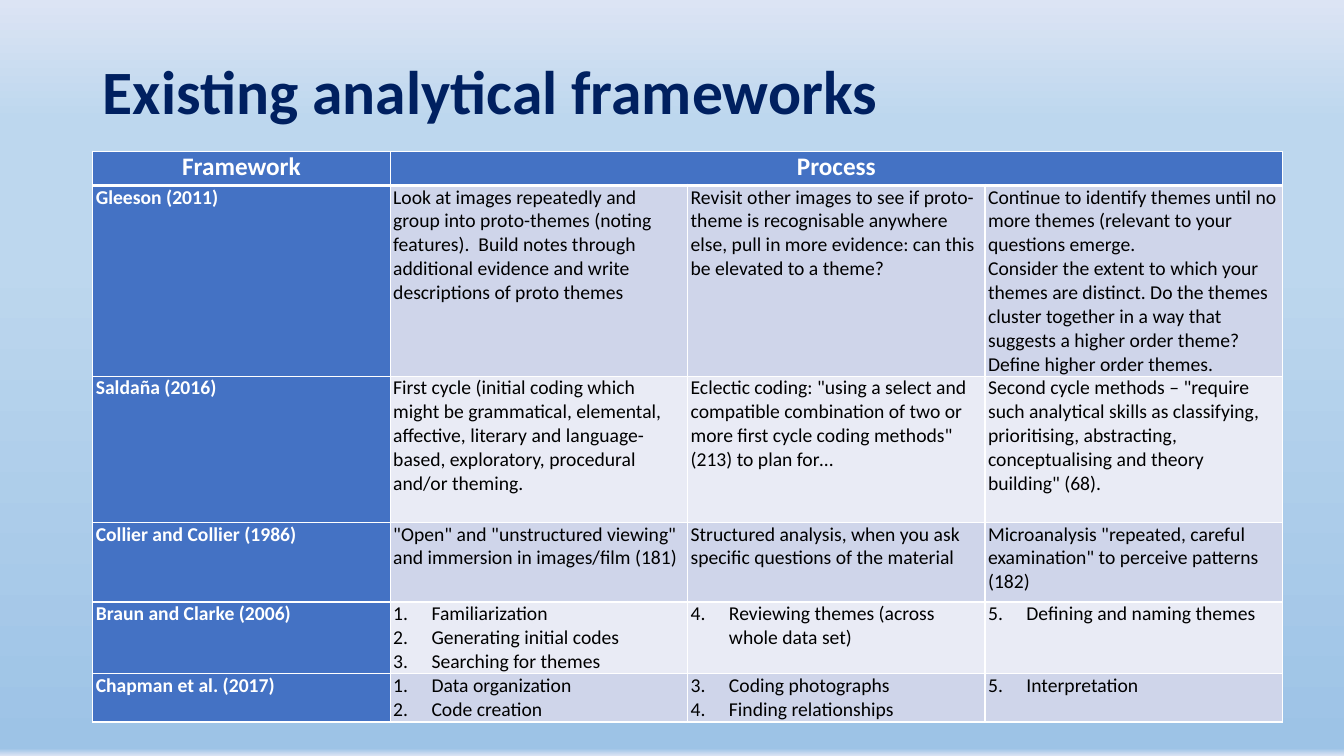
import pptx
import pptx.dml.color
import pptx.enum.text
import pptx.oxml
import pptx.oxml.ns
import pptx.util
from pptx.oxml.ns import nsdecls, qn

Inches = pptx.util.Inches
Pt = pptx.util.Pt

FONT = "Calibri"
WHITE, BLACK, NAVY, BLUE = "FFFFFF", "000000", "002060", "4472C4"
BANDS = ["CFD5EA", "E9EBF5"]
SKY = [(0, "DCE4F4"), (16, "BDD7EE"), (34, "BDD7EE"), (99, "9DC3E6"), (100, "DCE4F4")]

# Layout grid in inches
LEFT, TABLE_TOP, COLUMN_WIDTH = 0.92, 1.5, 2.95
ROW_HEIGHTS = [0.34, 1.89, 1.45, 0.79, 0.71, 0.48]
HANGING = 0.38

# Each process cell is (first number or None, paragraphs)
FRAMEWORKS = [
    ("Gleeson (2011)", [
        (None, ["Look at images repeatedly and group into proto-themes (noting features).  "
                "Build notes through additional evidence and write descriptions of proto themes"]),
        (None, ["Revisit other images to see if proto-theme is recognisable anywhere else, "
                "pull in more evidence: can this be elevated to a theme?"]),
        (None, ["Continue to identify themes until no more themes (relevant to your "
                "questions emerge.",
                "Consider the extent to which your themes are distinct. Do the themes cluster "
                "together in a way that suggests a higher order theme? "
                "Define higher order themes."])]),
    ("Saldaña (2016)", [
        (None, ["First cycle (initial coding which might be grammatical, elemental, affective, "
                "literary and language-based, exploratory, procedural and/or theming."]),
        (None, ['Eclectic coding: "using a select and compatible combination of two or more '
                'first cycle coding methods" (213) to plan for…']),
        (None, ['Second cycle methods – "require such analytical skills as classifying, '
                'prioritising, abstracting, conceptualising and theory building" (68).'])]),
    ("Collier and Collier (1986)", [
        (None, ['"Open" and "unstructured viewing" and immersion in images/film (181)']),
        (None, ["Structured analysis, when you ask specific questions of the material"]),
        (None, ['Microanalysis "repeated, careful examination" to perceive patterns (182)'])]),
    ("Braun and Clarke (2006)", [
        (1, ["Familiarization", "Generating initial codes", "Searching for themes"]),
        (4, ["Reviewing themes (across whole data set)"]),
        (5, ["Defining and naming themes"])]),
    ("Chapman et al. (2017)", [
        (1, ["Data organization", "Code creation"]),
        (3, ["Coding photographs", "Finding relationships"]),
        (5, ["Interpretation"])]),
]


def color(value):
    return pptx.dml.color.RGBColor.from_string(value)


def add_run(paragraph, text, size, font_color, bold):
    run = paragraph.add_run()
    run.text = text
    run.font.name = FONT
    run.font.size = Pt(size)
    run.font.bold = bold
    run.font.color.rgb = color(font_color)


def number_paragraph(paragraph, start):
    properties = paragraph._p.get_or_add_pPr()
    properties.set("marL", str(Inches(HANGING)))
    properties.set("indent", str(-Inches(HANGING)))
    properties.append(pptx.oxml.parse_xml(
        f'<a:buAutoNum {nsdecls("a")} type="arabicPeriod" startAt="{start}"/>'))


def set_borders(cell, top=1, bottom=1):
    properties = cell._tc.get_or_add_tcPr()
    for side, width in (("L", 1), ("R", 1), ("T", top), ("B", bottom)):
        properties.append(pptx.oxml.parse_xml(
            f'<a:ln{side} {nsdecls("a")} w="{Pt(width)}"><a:solidFill>'
            f'<a:srgbClr val="{WHITE}"/></a:solidFill></a:ln{side}>'))


def style_cell(cell, fill, top=1, bottom=1):
    set_borders(cell, top, bottom)
    cell.fill.solid()
    cell.fill.fore_color.rgb = color(fill)
    cell.margin_left = cell.margin_right = Inches(0.03)
    cell.margin_top = cell.margin_bottom = 0


def fill_cell(cell, lines, start=None, size=14, font_color=BLACK, bold=False, align="LEFT"):
    frame = cell.text_frame
    for index, line in enumerate(lines):
        paragraph = frame.add_paragraph() if index else frame.paragraphs[0]
        paragraph.alignment = getattr(pptx.enum.text.PP_ALIGN, align)
        if start:
            number_paragraph(paragraph, start)
        add_run(paragraph, line, size, font_color, bold)


def set_background(slide):
    fill = slide.background.fill
    fill.gradient()
    fill.gradient_angle = 270
    stops = slide._element.find(".//" + qn("a:gsLst"))
    for stop in list(stops):
        stops.remove(stop)
    for position, value in SKY:
        stops.append(pptx.oxml.parse_xml(
            f'<a:gs {nsdecls("a")} pos="{position * 1000}"><a:srgbClr val="{value}"/></a:gs>'))


def set_title(slide, text):
    title = slide.shapes.title
    title.left, title.top = Inches(LEFT), Inches(0.51)
    title.width, title.height = Inches(11.5), Inches(0.86)
    title.text_frame.vertical_anchor = pptx.enum.text.MSO_ANCHOR.MIDDLE
    paragraph = title.text_frame.paragraphs[0]
    paragraph.alignment = pptx.enum.text.PP_ALIGN.LEFT
    paragraph.line_spacing = 0.9
    add_run(paragraph, text, 44, NAVY, True)


def add_framework_table(slide):
    table = slide.shapes.add_table(
        len(ROW_HEIGHTS), 4, Inches(LEFT), Inches(TABLE_TOP),
        Inches(4 * COLUMN_WIDTH), Inches(sum(ROW_HEIGHTS))).table
    for column in table.columns:
        column.width = Inches(COLUMN_WIDTH)
    for row, height in zip(table.rows, ROW_HEIGHTS):
        row.height = Inches(height)

    # Header row
    for column in range(4):
        style_cell(table.cell(0, column), BLUE, bottom=3)
    table.cell(0, 1).merge(table.cell(0, 3))
    for column, heading in enumerate(["Framework", "Process"]):
        fill_cell(table.cell(0, column), [heading], size=18, font_color=WHITE,
                  bold=True, align="CENTER")

    # One row for each framework
    for row, (framework, steps) in enumerate(FRAMEWORKS, start=1):
        top = 3 if row == 1 else 1
        name_cell = table.cell(row, 0)
        style_cell(name_cell, BLUE, top)
        fill_cell(name_cell, [framework], font_color=WHITE, bold=True)
        for column, (start, lines) in enumerate(steps, start=1):
            cell = table.cell(row, column)
            style_cell(cell, BANDS[(row - 1) % 2], top)
            fill_cell(cell, lines, start)


def main():
    presentation = pptx.Presentation()
    presentation.slide_width, presentation.slide_height = Inches(13.33), Inches(7.5)
    slide = presentation.slides.add_slide(presentation.slide_layouts[5])
    set_background(slide)
    set_title(slide, "Existing analytical frameworks")
    add_framework_table(slide)
    presentation.save("out.pptx")


if __name__ == "__main__":
    main()
